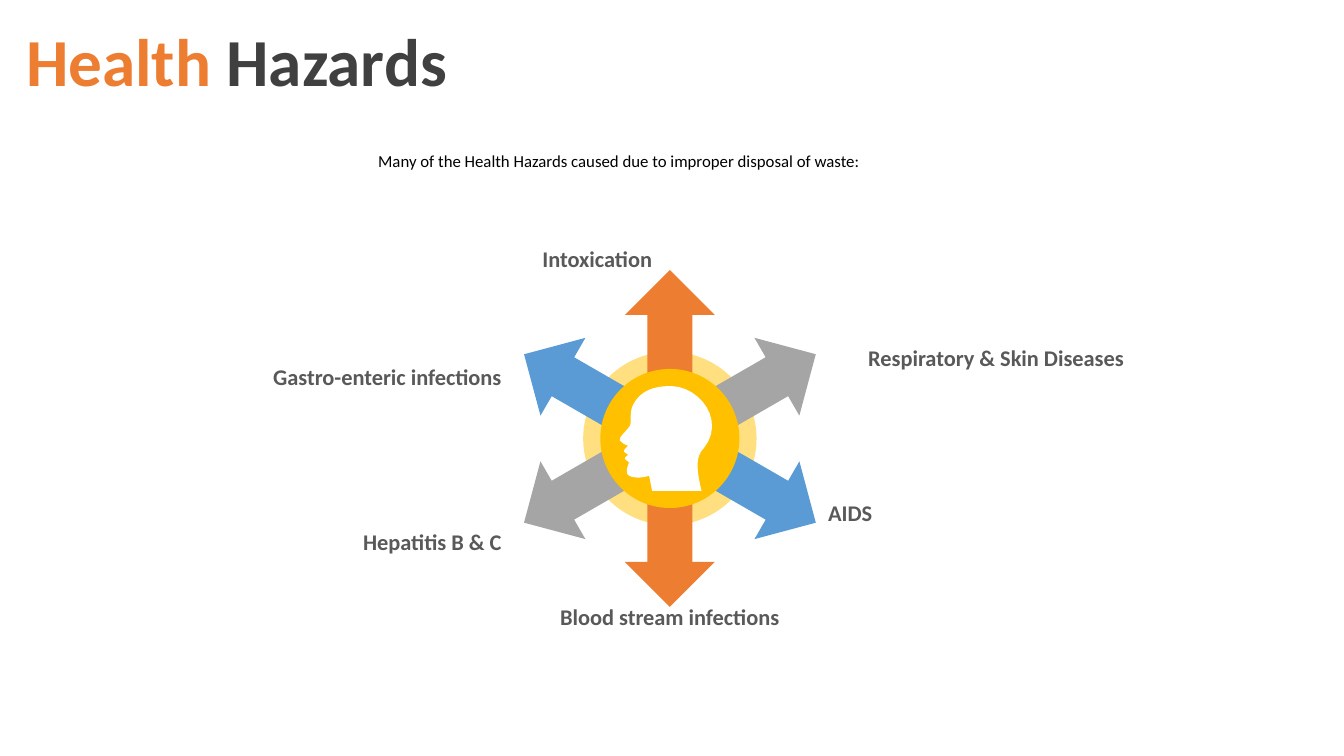
from lxml.etree import SubElement
from pptx import Presentation
from pptx.dml.color import RGBColor
from pptx.enum.shapes import MSO_SHAPE
from pptx.enum.text import MSO_ANCHOR, MSO_AUTO_SIZE, PP_ALIGN
from pptx.oxml.ns import qn
from pptx.util import Inches, Pt

COLS, ROWS = 160, 90
ORANGE, GREY, BLUE, GOLD, WHITE = "ED7D31", "A5A5A5", "5B9BD5", "FFC000", "FFFFFF"
DARK, MID, BLACK = "404040", "595959", "000000"
HUB = (79.75, 52.2)
HEAD = (73.8, 45.96)
HEAD_UNIT = 0.12
HEAD_START = (51, 0)
HEAD_STEPS = [
    [(30, 0), (18, 7), (12, 21)],
    [(9, 32), (13, 37), (8, 42)],
    [(4, 47), (-1, 51), (0, 54)],
    [(2, 56), (4, 58), (8, 59)],
    [(7, 61), (2, 64), (5, 66)],
    [(8, 68)],
    [(7, 70), (5, 70), (5, 72)],
    [(6, 74), (9, 75), (9, 76)],
    [(7, 81), (6, 86), (8, 88)],
    [(11, 91), (20, 92), (29, 89)],
    [(32, 104)],
    [(81, 104)],
    [(75, 80), (76, 69), (83, 62)],
    [(105, 35), (80, 1), (51, 0)],
]
LABELS = [
    ("Gastro-enteric infections", 10.3, 42.7, 50.6, PP_ALIGN.RIGHT),
    ("Respiratory & Skin Diseases", 82.3, 40.4, 52.7, PP_ALIGN.RIGHT),
    ("Hepatitis B & C", 10.3, 62.3, 50.6, PP_ALIGN.RIGHT),
    ("Intoxication", 63.4, 28.6, 50.6, PP_ALIGN.LEFT),
    ("Blood stream infections", 65.5, 71.2, 52.7, PP_ALIGN.LEFT),
    ("AIDS", 97.4, 58.8, 50.6, PP_ALIGN.LEFT),
]


def rgb(color):
    return RGBColor.from_string(color)


def bezier(start, a, b, end, n=12):
    for t in (i / n for i in range(1, n + 1)):
        u = 1 - t
        yield tuple(u**3 * p0 + 3 * u * u * t * p1 + 3 * u * t * t * p2 + t**3 * p3
                    for p0, p1, p2, p3 in zip(start, a, b, end))


def outline(start, steps):
    for step in steps:
        yield from bezier(start, *step) if len(step) == 3 else step
        start = step[-1]


class Deck:
    font = "Calibri"

    def __init__(self):
        self.prs = Presentation()
        self.prs.slide_width, self.prs.slide_height = Inches(13.33), Inches(7.5)
        self.s = self.prs.slides.add_slide(self.prs.slide_layouts[5])

    def x(self, cols):
        return round(self.prs.slide_width * cols / COLS)

    def y(self, rows):
        return round(self.prs.slide_height * rows / ROWS)

    def box(self, col, row, w, h):
        return self.x(col), self.y(row), self.x(w), self.y(h)

    def style(self, r, size, color, bold):
        r.font.name, r.font.size, r.font.bold = self.font, Pt(size), bold
        r.font.color.rgb = rgb(color)

    def paint(self, sp, color, alpha=None):
        sp.shadow.inherit = False
        sp.fill.solid()
        sp.fill.fore_color.rgb = rgb(color)
        sp.line.fill.background()
        if alpha:
            clr = sp.fill._xPr.find(".//" + qn("a:srgbClr"))
            SubElement(clr, qn("a:alpha")).set("val", str(alpha * 1000))

    def title(self, parts, *box):
        sp = self.s.shapes.title
        sp.left, sp.top, sp.width, sp.height = self.box(*box)
        tf = sp.text_frame
        tf.vertical_anchor, tf.auto_size = MSO_ANCHOR.MIDDLE, MSO_AUTO_SIZE.NONE
        p = tf.paragraphs[0]
        p.alignment, p.line_spacing = PP_ALIGN.LEFT, 0.9
        for text, color in parts:
            r = p.add_run()
            r.text = text
            self.style(r, 48, color, True)

    def text(self, text, *box, size=16, color=MID, bold=True, align=PP_ALIGN.LEFT,
             fit=MSO_AUTO_SIZE.SHAPE_TO_FIT_TEXT):
        tf = self.s.shapes.add_textbox(*self.box(*box)).text_frame
        tf.word_wrap, tf.auto_size = True, fit
        p = tf.paragraphs[0]
        p.text, p.alignment = text, align
        self.style(p.runs[0], size, color, bold)

    def shape(self, kind, center, w, h, color, alpha=None, rotation=0):
        col, row = center
        sp = self.s.shapes.add_shape(kind, *self.box(col - w / 2, row - h / 2, w, h))
        sp.rotation = rotation
        self.paint(sp, color, alpha)

    def freeform(self, origin, unit, start, steps, color):
        def place(point):
            return (self.x(origin[0] + point[0] * unit),
                    self.y(origin[1] + point[1] * unit))

        fb = self.s.shapes.build_freeform(*place(start))
        fb.add_line_segments([place(pt) for pt in outline(start, steps)], close=True)
        self.paint(fb.convert_to_shape(), color)


def main():
    deck = Deck()
    deck.title([("Health ", ORANGE), ("Hazards", DARK)], 1.9, 0, 158.1, 15.5)
    deck.shape(MSO_SHAPE.OVAL, HUB, 20.64, 20.64, GOLD, alpha=50)
    for i, color in enumerate((ORANGE, GREY, BLUE)):
        deck.shape(MSO_SHAPE.UP_DOWN_ARROW, HUB, 10.7, 40.1, color, rotation=60 * i)
    deck.shape(MSO_SHAPE.OVAL, HUB, 16.56, 16.56, GOLD)
    for text, col, row, w, align in LABELS:
        deck.text(text, col, row, w, 4.44, align=align)
    deck.text("Many of the Health Hazards caused due to improper disposal of waste:",
              13.7, 17.3, 120, 2.9, size=12, color=BLACK, bold=False,
              align=PP_ALIGN.CENTER, fit=MSO_AUTO_SIZE.NONE)
    deck.freeform(HEAD, HEAD_UNIT, HEAD_START, HEAD_STEPS, WHITE)
    deck.prs.save("out.pptx")


if __name__ == "__main__":
    main()
